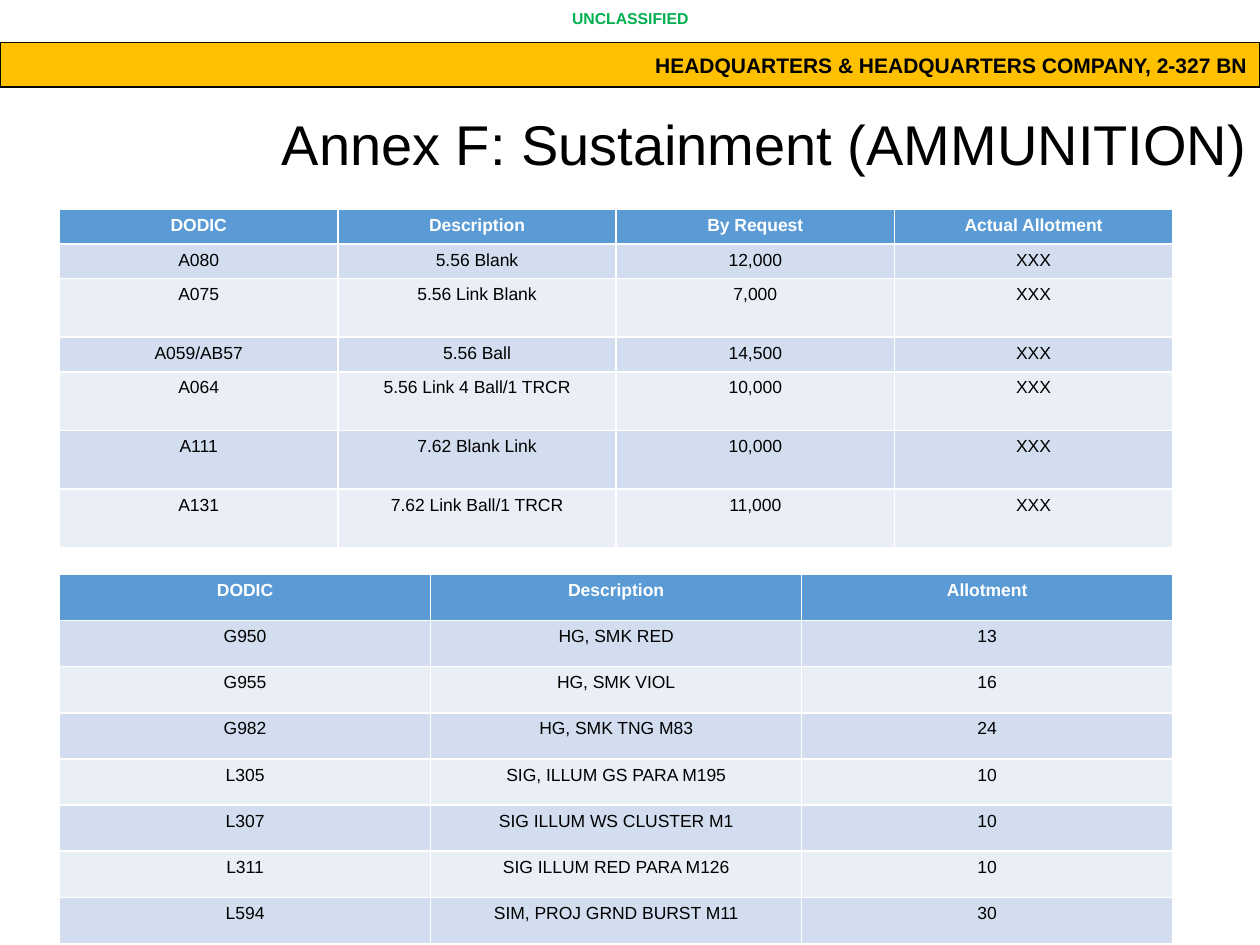
from pptx import Presentation
from pptx.dml.color import RGBColor
from pptx.enum.shapes import MSO_SHAPE
from pptx.enum.text import MSO_ANCHOR, PP_ALIGN
from pptx.util import Cm, Pt

RECT = MSO_SHAPE.RECTANGLE
TOP, MID = MSO_ANCHOR.TOP, MSO_ANCHOR.MIDDLE
MIDST, RIGHT = PP_ALIGN.CENTER, PP_ALIGN.RIGHT
BLACK = RGBColor(0, 0, 0)
WHITE = RGBColor(255, 255, 255)
GREEN = RGBColor(0, 176, 80)
GOLD = RGBColor(255, 192, 0)
BLUE = RGBColor(91, 155, 213)
BANDS = [RGBColor(234, 239, 247), RGBColor(210, 222, 239)]


def write(frame, text, size=10, color=BLACK, bold=False, align=MIDST, anchor=TOP, space=None):
    frame.word_wrap = True
    frame.vertical_anchor = anchor
    para = frame.paragraphs[0]
    para.alignment = align
    para.line_spacing = space
    run = para.add_run()
    run.text = text
    font = run.font
    font.name = "Arial"
    font.size = Pt(size)
    font.bold = bold
    font.color.rgb = color


deck = Presentation()
deck.slide_width = Cm(25.4)
deck.slide_height = Cm(19.05)
slide = deck.slides.add_slide(deck.slide_layouts[6])
shapes = slide.shapes

mark = shapes.add_textbox(Cm(3.18), Cm(0.05), Cm(19.05), Cm(0.64))
write(mark.text_frame, "UNCLASSIFIED", size=9, color=GREEN, bold=True)

banner = shapes.add_shape(RECT, 0, Cm(0.86), Cm(25.4), Cm(0.89))
banner.shadow.inherit = False
banner.fill.solid()
banner.fill.fore_color.rgb = GOLD
banner.line.color.rgb = BLACK
banner.line.width = Pt(1)
write(banner.text_frame, "HEADQUARTERS & HEADQUARTERS COMPANY, 2-327 BN",
      size=12, bold=True, align=RIGHT, anchor=MID)

title = shapes.add_textbox(Cm(3.5), Cm(1.14), Cm(21.9), Cm(3.68))
write(title.text_frame, "Annex F: Sustainment (AMMUNITION)",
      size=32, align=RIGHT, anchor=MID, space=0.9)

rounds = [
    ("DODIC", "Description", "By Request", "Actual Allotment"),
    ("A080", "5.56 Blank", "12,000", "XXX"),
    ("A075", "5.56 Link Blank", "7,000", "XXX"),
    ("A059/AB57", "5.56 Ball", "14,500", "XXX"),
    ("A064", "5.56 Link 4 Ball/1 TRCR", "10,000", "XXX"),
    ("A111", "7.62 Blank Link", "10,000", "XXX"),
    ("A131", "7.62 Link Ball/1 TRCR", "11,000", "XXX"),
]
signals = [
    ("DODIC", "Description", "Allotment"),
    ("G950", "HG, SMK RED", "13"),
    ("G955", "HG, SMK VIOL", "16"),
    ("G982", "HG, SMK TNG M83", "24"),
    ("L305", "SIG, ILLUM GS PARA M195", "10"),
    ("L307", "SIG ILLUM WS CLUSTER M1", "10"),
    ("L311", "SIG ILLUM RED PARA M126", "10"),
    ("L594", "SIM, PROJ GRND BURST M11", "30"),
]
tables = [
    (4.22, rounds, [0.7, 0.7, 1.18, 0.7, 1.18, 1.18, 1.18]),
    (11.58, signals, [0.93] * len(signals)),
]
for top, data, heights in tables:
    frame = shapes.add_table(len(data), len(data[0]), Cm(1.2), Cm(top),
                             Cm(22.44), Cm(sum(heights)))
    grid = frame.table
    for row, (values, height) in enumerate(zip(data, heights)):
        grid.rows[row].height = Cm(height)
        head = row == 0
        for col, value in enumerate(values):
            cell = grid.cell(row, col)
            cell.fill.solid()
            cell.fill.fore_color.rgb = BLUE if head else BANDS[row % 2]
            write(cell.text_frame, value, color=WHITE if head else BLACK, bold=head)

deck.save("out.pptx")
